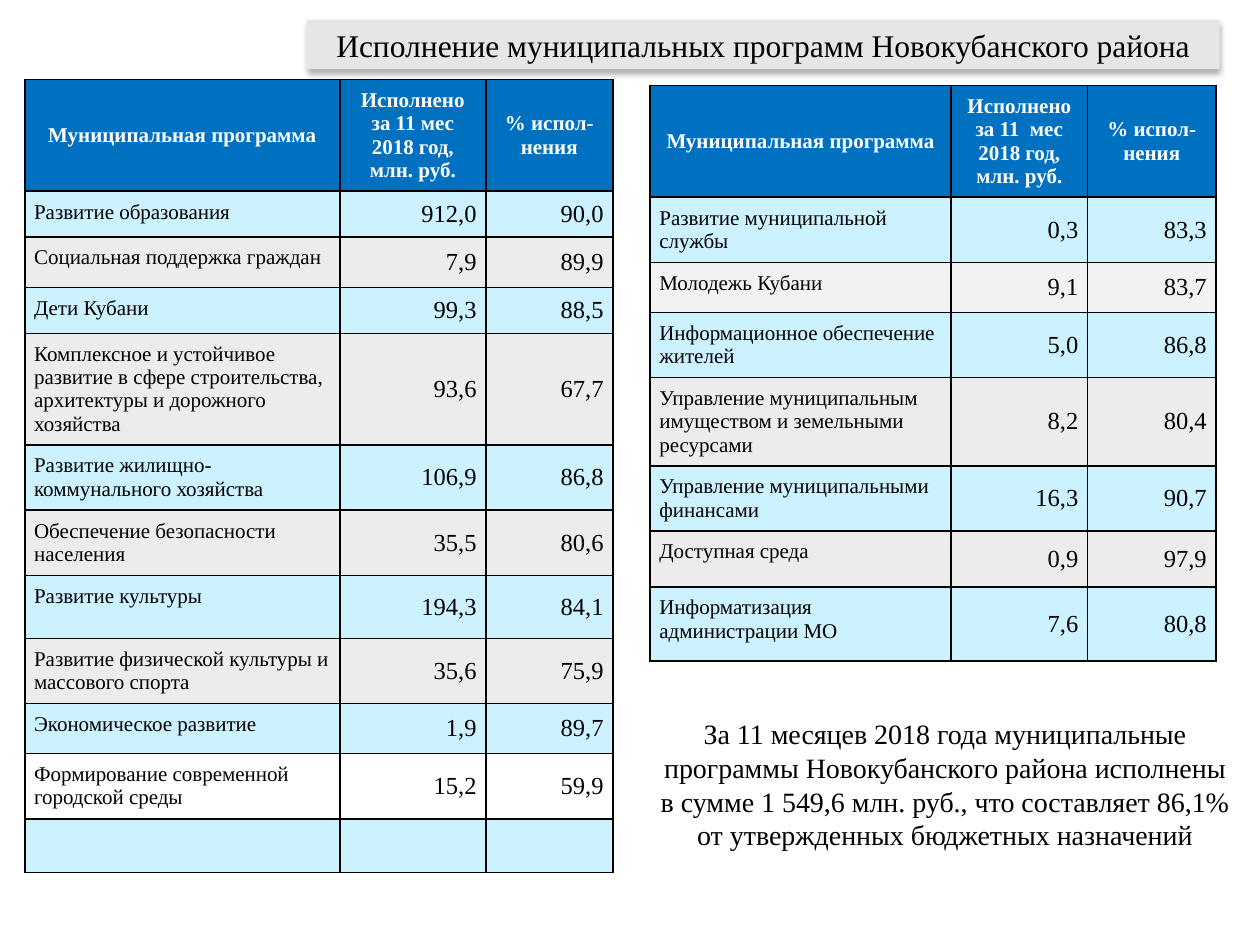
"""Build a slide showing how the district's municipal programmes were carried out."""
import pptx
import pptx.dml.color
import pptx.enum.text
import pptx.oxml
import pptx.oxml.ns
import pptx.util

Pt = pptx.util.Pt
ALIGN = pptx.enum.text.PP_ALIGN
ANCHOR = pptx.enum.text.MSO_ANCHOR

LEFT_ROWS = [
    ("Муниципальная программа", "Исполнено за 11 мес 2018 год, млн. руб.", "% испол-нения"),
    ("Развитие образования", "912,0", "90,0"),
    ("Социальная поддержка граждан", "7,9", "89,9"),
    ("Дети Кубани", "99,3", "88,5"),
    ("Комплексное и устойчивое развитие в сфере строительства, архитектуры и дорожного хозяйства",
     "93,6", "67,7"),
    ("Развитие жилищно-коммунального хозяйства", "106,9", "86,8"),
    ("Обеспечение безопасности населения", "35,5", "80,6"),
    ("Развитие культуры", "194,3", "84,1"),
    ("Развитие физической культуры и массового спорта", "35,6", "75,9"),
    ("Экономическое развитие", "1,9", "89,7"),
    ("Формирование современной городской среды", "15,2", "59,9"),
    ("", "", ""),
]
RIGHT_ROWS = [
    ("Муниципальная программа", "Исполнено за 11  мес 2018 год, млн. руб.", "% испол-нения"),
    ("Развитие муниципальной службы", "0,3", "83,3"),
    ("Молодежь Кубани", "9,1", "83,7"),
    ("Информационное обеспечение жителей", "5,0", "86,8"),
    ("Управление муниципальным имуществом и земельными ресурсами", "8,2", "80,4"),
    ("Управление муниципальными финансами", "16,3", "90,7"),
    ("Доступная среда", "0,9", "97,9"),
    ("Информатизация администрации МО", "7,6", "80,8"),
]
SUMMARY = ("За 11 месяцев 2018 года муниципальные программы Новокубанского района исполнены "
           "в сумме 1 549,6 млн. руб., что составляет 86,1% от утвержденных бюджетных назначений")


def color(value):
    """Turn a hex string into a colour."""
    return pptx.dml.color.RGBColor.from_string(value)


def write(frame, text, size=12, ink="000000", bold=False, align=ALIGN.LEFT, font="Times New Roman"):
    """Write one formatted paragraph into a text frame."""
    frame.word_wrap = True
    paragraph = frame.paragraphs[0]
    paragraph.alignment = align
    run = paragraph.add_run()
    run.text = text
    run.font.name = font
    run.font.size = Pt(size)
    run.font.bold = bold
    run.font.color.rgb = color(ink)


class ReportSlide:
    """Hold the style and the current slide."""

    header, blue, gray, line = "0070C0", "CDF2FF", "ECECEC", "000000"
    inset = 5.3

    def __init__(self, presentation):
        """Add a slide with a title only."""
        self.slide = presentation.slides.add_slide(presentation.slide_layouts[5])

    def title(self, text, left, top, width, height):
        """Place the title on a gray bar with a soft shadow."""
        shape = self.slide.shapes.title
        shape.left, shape.top, shape.width, shape.height = map(Pt, (left, top, width, height))
        shape.fill.solid()
        shape.fill.fore_color.rgb = color("E6E6E6")
        shape.text_frame.auto_size = pptx.enum.text.MSO_AUTO_SIZE.NONE
        shape.text_frame.vertical_anchor = ANCHOR.MIDDLE
        write(shape.text_frame, text, size=18, align=ALIGN.CENTER)
        shape._element.spPr.append(pptx.oxml.parse_xml(
            f'<a:effectLst {pptx.oxml.ns.nsdecls("a")}>'
            f'<a:outerShdw blurRad="{Pt(3.5)}" dist="{Pt(2.2)}" dir="5400000" rotWithShape="0">'
            '<a:srgbClr val="000000"><a:alpha val="32000"/></a:srgbClr>'
            '</a:outerShdw></a:effectLst>'))

    def text(self, text, left, top, width, height):
        """Add a centred text box."""
        box = self.slide.shapes.add_textbox(*map(Pt, (left, top, width, height)))
        write(box.text_frame, text, size=16, align=ALIGN.CENTER)

    def table(self, rows, left, top, widths, heights, special_fills):
        """Add a table with alternating row fills."""
        table = self.slide.shapes.add_table(
            len(rows), len(widths), Pt(left), Pt(top), Pt(sum(widths)), Pt(sum(heights))).table
        table.first_row = table.horz_banding = False
        for column, width in zip(table.columns, widths):
            column.width = Pt(width)
        for row_index, (values, height) in enumerate(zip(rows, heights)):
            table.rows[row_index].height = Pt(height)
            fill = special_fills.get(row_index, self.blue if row_index % 2 else self.gray)
            for column_index, value in enumerate(values):
                cell = table.cell(row_index, column_index)
                self.cell_style(cell, self.header if row_index == 0 else fill)
                if row_index == 0:
                    cell.vertical_anchor = ANCHOR.MIDDLE
                    write(cell.text_frame, value, ink="FFFFFF", bold=True, align=ALIGN.CENTER)
                elif column_index == 0:
                    write(cell.text_frame, value)
                else:
                    cell.vertical_anchor = ANCHOR.MIDDLE
                    write(cell.text_frame, value, size=14, align=ALIGN.RIGHT)

    def cell_style(self, cell, fill):
        """Set the margins, borders and fill of a cell."""
        cell.margin_left = cell.margin_right = Pt(self.inset)
        cell.margin_top = cell.margin_bottom = Pt(self.inset)
        properties = cell._tc.get_or_add_tcPr()
        for side in ("lnL", "lnR", "lnT", "lnB"):
            properties.append(pptx.oxml.parse_xml(
                f'<a:{side} {pptx.oxml.ns.nsdecls("a")} w="{Pt(1)}">'
                f'<a:solidFill><a:srgbClr val="{self.line}"/></a:solidFill></a:{side}>'))
        cell.fill.solid()
        cell.fill.fore_color.rgb = color(fill)


def main():
    """Build and save the presentation."""
    presentation = pptx.Presentation()
    presentation.slide_width, presentation.slide_height = Pt(720), Pt(540)
    report = ReportSlide(presentation)
    report.title("Исполнение муниципальных программ Новокубанского района", 175.5, 11.5, 521.5, 28)
    report.table(RIGHT_ROWS, 371.5, 48.8, (172, 78, 73.4),
                 (62.9, 36.6, 28.6, 36.6, 49.7, 36.3, 32, 42.3), {2: "F2F2F2"})
    report.table(LEFT_ROWS, 14.2, 45.4, (180, 83.4, 72.6),
                 (62.9, 25.1, 29.1, 25.1, 62.9, 36.6, 36.6, 36, 37, 28.7, 36.6, 29),
                 {10: "FFFFFF"})
    report.text(SUMMARY, 369.4, 406.1, 341.3, 85)
    presentation.save("out.pptx")


if __name__ == "__main__":
    main()
